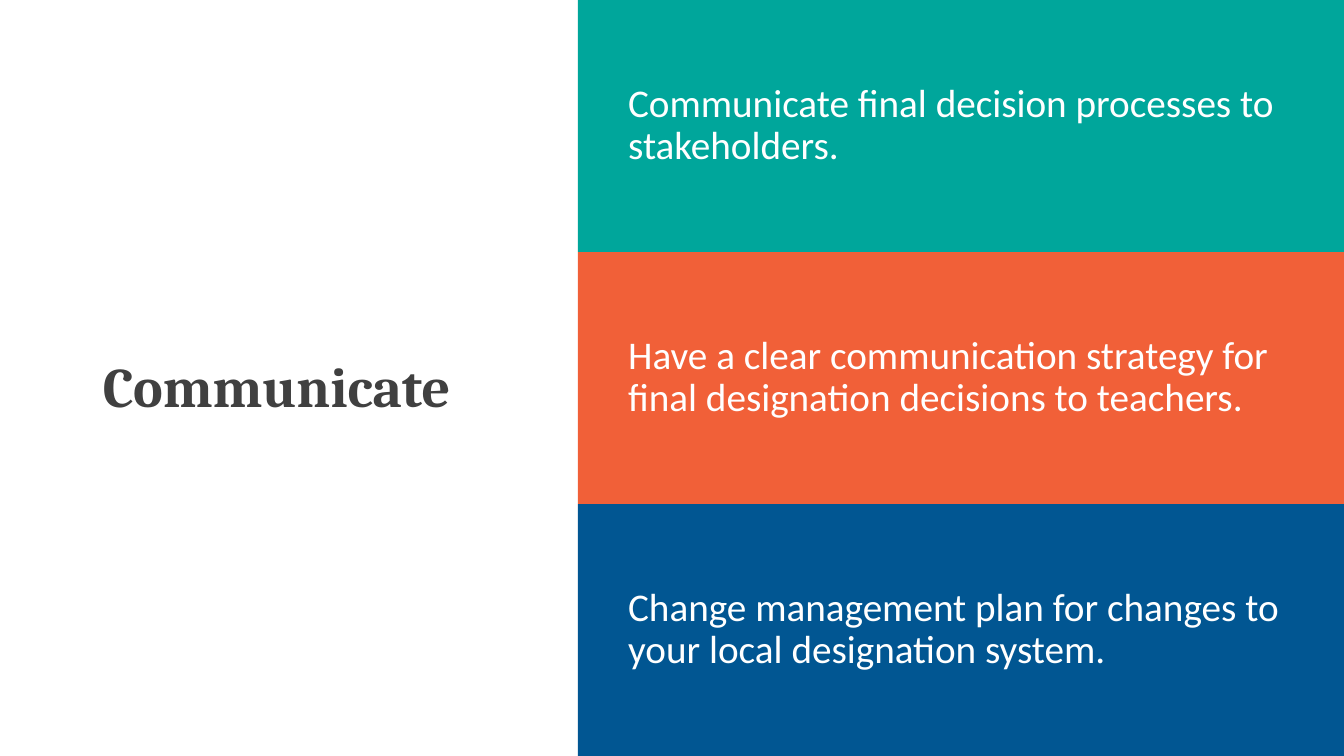
"""Build a slide with a title on the left and three coloured message bands on the right."""
from dataclasses import dataclass

from lxml.etree import SubElement
from pptx import Presentation
from pptx.dml.color import RGBColor
from pptx.enum.text import MSO_ANCHOR, MSO_AUTO_SIZE, PP_ALIGN
from pptx.oxml.ns import qn
from pptx.shapes.placeholder import SlidePlaceholder
from pptx.util import Cm, Pt

CHARCOAL = RGBColor(0x40, 0x40, 0x40)
WHITE = RGBColor(0xFF, 0xFF, 0xFF)
TEAL = RGBColor(0x00, 0xA6, 0x9B)
ORANGE = RGBColor(0xF1, 0x60, 0x38)
BLUE = RGBColor(0x01, 0x56, 0x92)

PAGE_WIDTH, PAGE_HEIGHT = Cm(33.87), Cm(19.05)
BAND_LEFT = Cm(14.56)
COMPARISON_LAYOUT = 4


@dataclass(frozen=True)
class Band:
    text: str
    color: RGBColor


BANDS = (
    Band("Communicate final decision processes to stakeholders.", TEAL),
    Band("Have a clear communication strategy for final designation decisions to teachers.", ORANGE),
    Band("Change management plan for changes to your local designation system.", BLUE),
)


def place(box: SlidePlaceholder, left: int, top: int, width: int, height: int) -> None:
    box.left, box.top, box.width, box.height = left, top, width, height


def write(box: SlidePlaceholder, text: str, *, font: str, size: int, color: RGBColor,
          bold: bool = False, inset: Cm = Cm(0.25)) -> None:
    frame = box.text_frame
    frame.word_wrap = True
    frame.auto_size = MSO_AUTO_SIZE.NONE
    frame.vertical_anchor = MSO_ANCHOR.MIDDLE
    frame.margin_left = frame.margin_right = inset
    frame.margin_top = frame.margin_bottom = Cm(0.13)
    para = frame.paragraphs[0]
    properties = para._p.get_or_add_pPr()
    properties.set("marL", "0")
    properties.set("indent", "0")
    SubElement(properties, qn("a:buNone"))
    para.alignment = PP_ALIGN.LEFT
    para.line_spacing = 0.9
    para.space_before = Pt(0)
    span = para.add_run()
    span.text = text
    span.font.name = font
    span.font.size = Pt(size)
    span.font.bold = bold
    span.font.color.rgb = color


def main() -> None:
    deck = Presentation()
    deck.slide_width, deck.slide_height = PAGE_WIDTH, PAGE_HEIGHT
    page = deck.slides.add_slide(deck.slide_layouts[COMPARISON_LAYOUT])
    title, *bodies = page.placeholders

    place(title, Cm(2.34), Cm(2.62), Cm(11.13), Cm(14.38))
    write(title, "Communicate", font="Cambria", size=40, color=CHARCOAL, bold=True)

    band_height = PAGE_HEIGHT // len(BANDS)
    for index, (box, band) in enumerate(zip(bodies, BANDS)):
        place(box, BAND_LEFT, index * band_height, PAGE_WIDTH - BAND_LEFT, band_height)
        box.fill.solid()
        box.fill.fore_color.rgb = band.color
        write(box, band.text, font="Calibri", size=28, color=WHITE, inset=Cm(1.27))

    for unused in bodies[len(BANDS):]:
        unused.element.getparent().remove(unused.element)

    deck.save("out.pptx")


if __name__ == "__main__":
    main()
